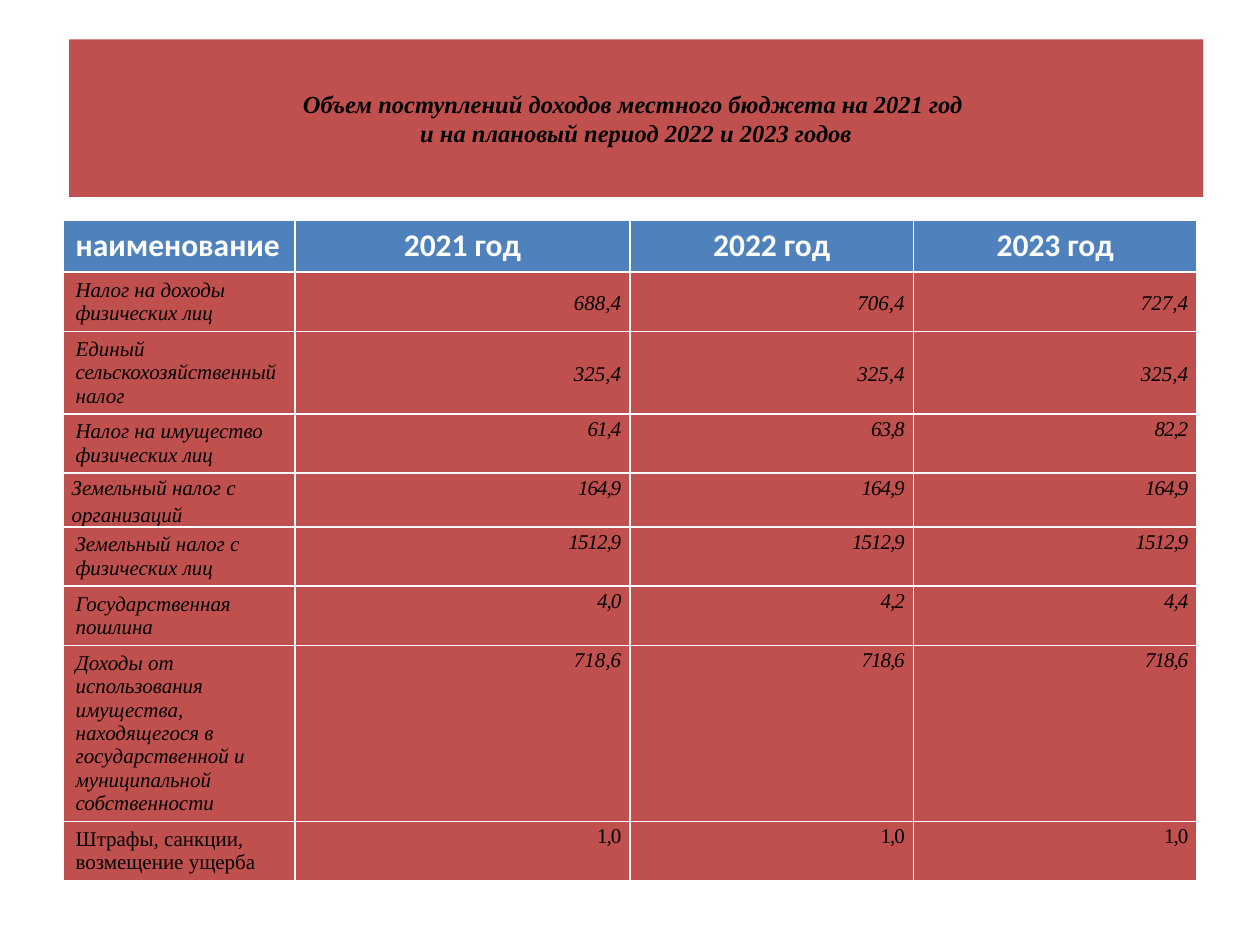
from pptx import Presentation
from pptx import util as u
from pptx.dml.color import RGBColor
from pptx.enum import text

Pt = u.Pt
COLORS = {"brick": "C0504D", "blue": "4F81BD", "white": "FFFFFF", "black": "000000"}
SERIF = "Times New Roman"

years = ["2021 год", "2022 год", "2023 год"]
incomes = [
    ("Налог на доходы физических лиц", ["688,4", "706,4", "727,4"], 33.5),
    ("Единый сельскохозяйственный налог", ["325,4", "325,4", "325,4"], 46.5),
    ("Налог на имущество физических лиц", ["61,4", "63,8", "82,2"], 33.5),
    ("Земельный налог с организаций", ["164,9", "164,9", "164,9"], 30.5),
    ("Земельный налог с физических лиц", ["1512,9", "1512,9", "1512,9"], 33.5),
    ("Государственная пошлина", ["4,0", "4,2", "4,4"], 33.5),
    ("Доходы от использования имущества, находящегося в государственной "
     "и муниципальной собственности", ["718,6", "718,6", "718,6"], 100),
    ("Штрафы, санкции, возмещение ущерба", ["1,0", "1,0", "1,0"], 33.5),
]
column_widths = [132.5, 191.5, 162, 162]
header_height = 29.5


def style(paragraph, size, name, color, bold=False, italic=False):
    font = paragraph.font
    font.size, font.name, font.bold, font.italic = Pt(size), name, bold, italic
    font.color.rgb = RGBColor.from_string(COLORS[color])


def fill_cell(cell, wording, color):
    cell.text = wording
    cell.fill.solid()
    cell.fill.fore_color.rgb = RGBColor.from_string(COLORS[color])
    return cell.text_frame.paragraphs[0]


prs = Presentation()
prs.slide_width, prs.slide_height = Pt(720), Pt(540)
slide = prs.slides.add_slide(prs.slide_layouts[5])

title = slide.shapes.title
title.left, title.top, title.width, title.height = Pt(39.5), Pt(22.5), Pt(648), Pt(90)
title.fill.solid()
title.fill.fore_color.rgb = RGBColor.from_string(COLORS["brick"])
title.text_frame.vertical_anchor = text.MSO_ANCHOR.MIDDLE
heading = title.text_frame.paragraphs[0]
heading.alignment = text.PP_ALIGN.CENTER
style(heading, 14, SERIF, "black", bold=True, italic=True)
heading.add_run().text = "Объем поступлений доходов местного бюджета на 2021 год "
heading.add_line_break()
heading.add_run().text = "и на плановый период 2022 и 2023 годов"

heights = [header_height] + [height for _, _, height in incomes]
budget = slide.shapes.add_table(
    len(heights), len(column_widths), Pt(36), Pt(126),
    Pt(sum(column_widths)), Pt(sum(heights))).table
for column, width in zip(budget.columns, column_widths):
    column.width = Pt(width)
for row, height in zip(budget.rows, heights):
    row.height = Pt(height)

for col, label in enumerate(["наименование"] + years):
    caption = fill_cell(budget.cell(0, col), label, "blue")
    style(caption, 18, "Calibri", "white", bold=True)
    if col:
        caption.alignment = text.PP_ALIGN.CENTER

for row, (income, amounts, _) in enumerate(incomes, start=1):
    italic = row < len(incomes)
    for col, wording in enumerate([income] + amounts):
        cell = budget.cell(row, col)
        entry = fill_cell(cell, wording, "brick")
        style(entry, 12, SERIF, "black", italic=italic)
        if col or row == 4:
            cell.margin_left = cell.margin_right = Pt(5)
            cell.margin_top = cell.margin_bottom = 0
            entry.line_spacing = 1.15
        if col:
            entry.alignment = text.PP_ALIGN.RIGHT
            if row <= 2:
                cell.vertical_anchor = text.MSO_ANCHOR.MIDDLE
            elif (row, col) != (7, 1):
                entry.runs[0]._r.get_or_add_rPr().set("spc", "-60")
            if 3 <= row <= 6:
                entry.space_after = Pt(10)

prs.save("out.pptx")
